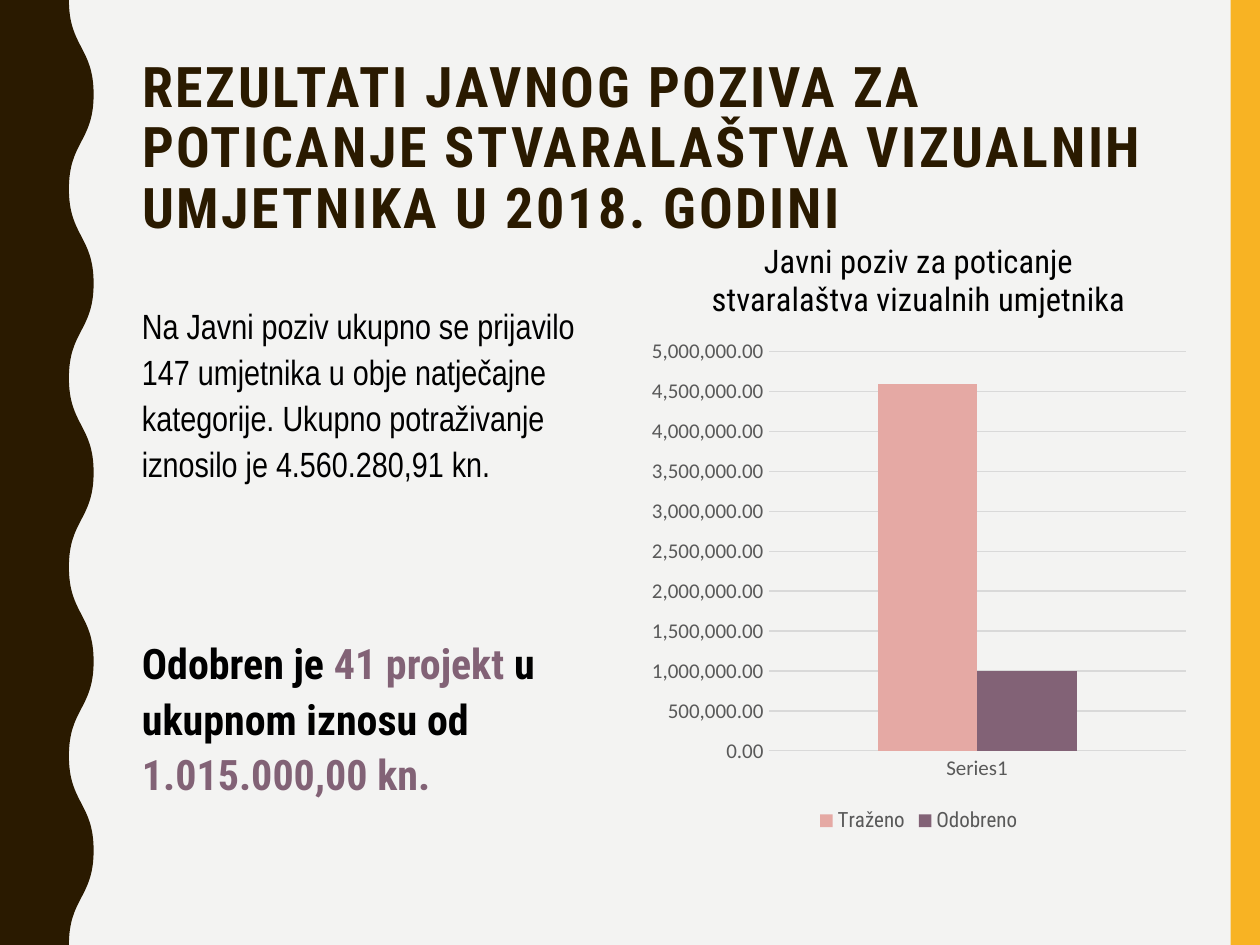
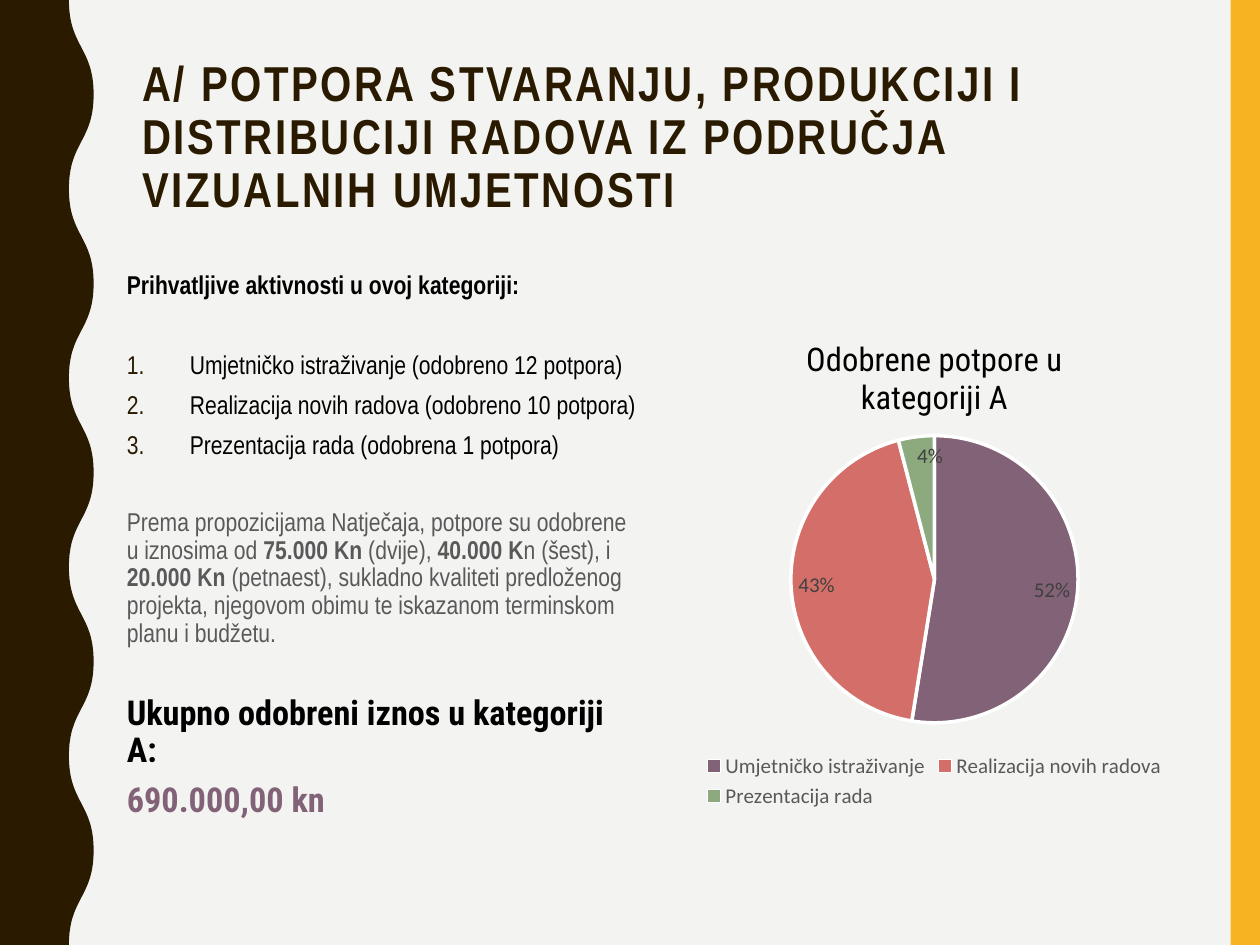
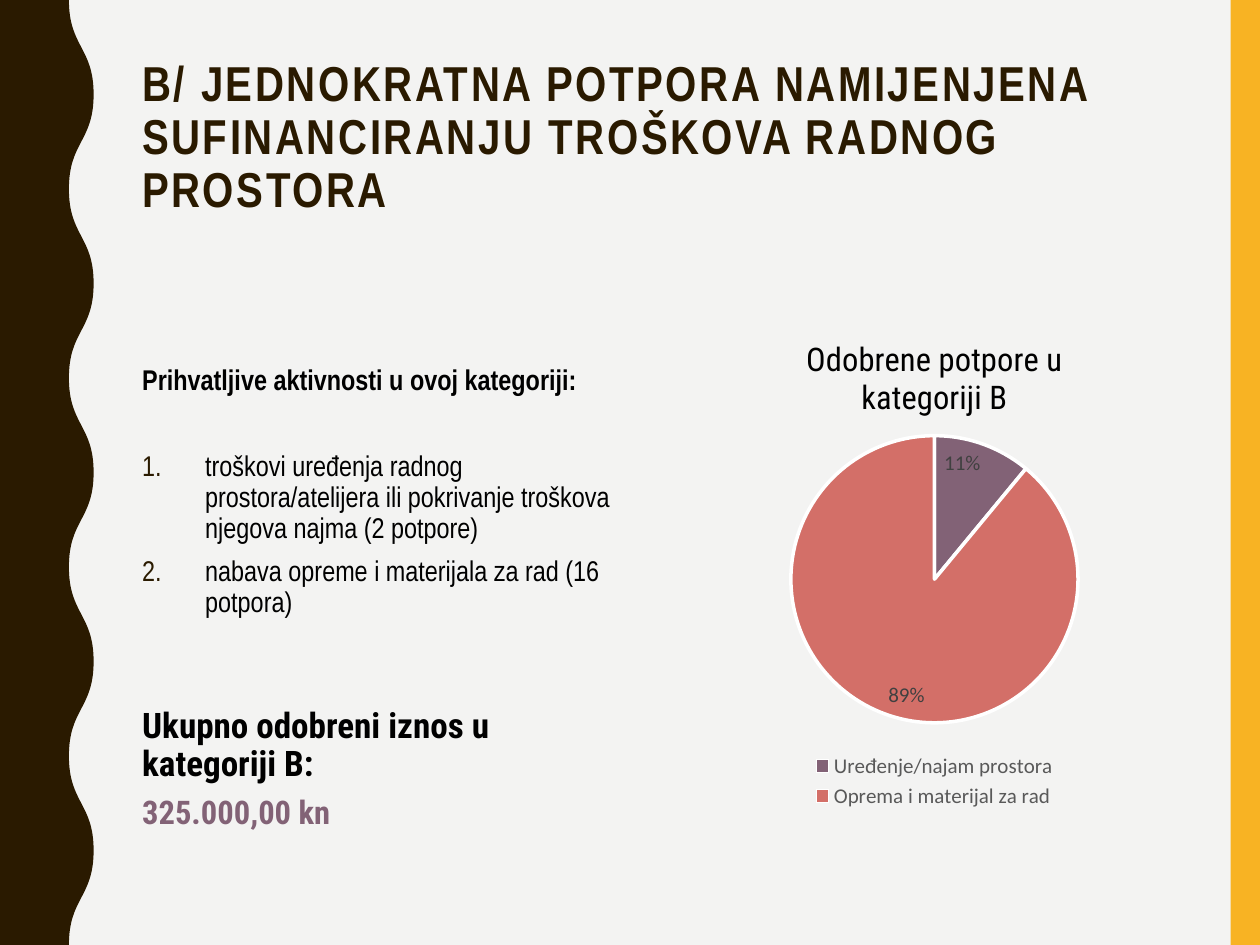
import lxml.etree
import pptx
import pptx.chart.data
import pptx.dml.color
import pptx.enum.chart
import pptx.enum.shapes
import pptx.enum.text
import pptx.oxml.ns
import pptx.util

Pt = pptx.util.Pt
RGBColor = pptx.dml.color.RGBColor
qn = pptx.oxml.ns.qn

# Shared colours and fonts
PAPER = RGBColor(0xF3, 0xF3, 0xF2)
YELLOW = RGBColor(0xF8, 0xB3, 0x23)
BROWN = RGBColor(0x2A, 0x1A, 0x00)
BLACK = RGBColor(0x00, 0x00, 0x00)
WHITE = RGBColor(0xFF, 0xFF, 0xFF)
GREY = RGBColor(0x59, 0x59, 0x59)
DARK_GREY = RGBColor(0x40, 0x40, 0x40)
GRID = RGBColor(0xD9, 0xD9, 0xD9)
PLUM = RGBColor(0x82, 0x62, 0x76)
PINK = RGBColor(0xE5, 0xA9, 0xA4)
CORAL = RGBColor(0xD3, 0x6F, 0x68)
GREEN = RGBColor(0x8C, 0xAA, 0x7E)
NARROW, ROBOTO, CALIBRI = "Arial Narrow", "Roboto Condensed", "Calibri"

WIDTH, HEIGHT = 720, 540
WAVE_IN, WAVE_OUT, WAVE_STEP = 39.4, 53.5, 54
PIE_BOX = (392.5, 180, 283, 285)


def set_font(font, name, size, color, bold=False):
    font.name, font.size, font.bold = name, Pt(size), bold
    font.color.rgb = color


def add_run(p, text, font=NARROW, size=20, color=BLACK, bold=False, spacing=0):
    r = p.add_run()
    r.text = text
    set_font(r.font, font, size, color, bold)
    if spacing:
        r._r.get_or_add_rPr().set("spc", str(int(spacing * 100)))


def paint(sp, color):
    sp.shadow.inherit = False
    sp.fill.solid()
    sp.fill.fore_color.rgb = color
    sp.line.fill.background()


def curve(line, start, end):
    """Turn a line segment into a curve that leaves and ends vertically."""
    middle = (start[1] + end[1]) // 2
    bezier = lxml.etree.Element(qn("a:cubicBezTo"))
    for x, y in ((start[0], middle), (end[0], middle), end):
        lxml.etree.SubElement(bezier, qn("a:pt"), x=str(x), y=str(y))
    line.getparent().replace(line, bezier)


def add_bands(slide):
    """Yellow bar on the right, wavy brown band on the left."""
    bar = slide.shapes.add_shape(pptx.enum.shapes.MSO_SHAPE.RECTANGLE,
                                 Pt(703.2), 0, Pt(16.8), Pt(HEIGHT))
    paint(bar, YELLOW)

    crests = [(Pt(WAVE_OUT if i % 2 else WAVE_IN), Pt(i * WAVE_STEP))
              for i in range(HEIGHT // WAVE_STEP + 1)]
    outline = slide.shapes.build_freeform(*crests[0])
    outline.add_line_segments(crests[1:] + [(0, Pt(HEIGHT)), (0, 0)])
    wave = outline.convert_to_shape()
    lines = list(wave._element.iter(qn("a:lnTo")))
    for line, start, end in zip(lines, crests, crests[1:]):
        curve(line, start, end)
    paint(wave, BROWN)
    return bar, wave


def share_bands(slide):
    """Move the bands to the layout, so that every slide shows them."""
    tree = slide.slide_layout.shapes._spTree
    for i, sp in enumerate(add_bands(slide)):
        tree.insert(2 + i, sp._element)


def add_slide(prs, title, font=NARROW, size=28):
    slide = prs.slides.add_slide(prs.slide_layouts[5])
    sp = slide.shapes.title
    sp.left, sp.top, sp.width, sp.height = Pt(74), Pt(30), Pt(601), Pt(117.5)
    tf = sp.text_frame
    tf.word_wrap = True
    tf.auto_size = pptx.enum.text.MSO_AUTO_SIZE.NONE
    tf.vertical_anchor = pptx.enum.text.MSO_ANCHOR.TOP
    p = tf.paragraphs[0]
    p.alignment = pptx.enum.text.PP_ALIGN.LEFT
    p.line_spacing = 0.9
    add_run(p, title, font=font, size=size, color=BROWN, bold=True, spacing=1.5)
    return slide


def number(p):
    """Turn a paragraph into an item of a numbered list."""
    pPr = p._p.get_or_add_pPr()
    pPr.set("marL", str(Pt(36)))
    pPr.set("indent", str(-Pt(36)))
    clr = lxml.etree.SubElement(pPr, qn("a:buClr"))
    lxml.etree.SubElement(clr, qn("a:srgbClr"), val=str(BROWN))
    lxml.etree.SubElement(pPr, qn("a:buAutoNum"), type="arabicPeriod")


def add_body(slide, box, paragraphs, line_spacing=0.9):
    """Each paragraph is (space before, numbered, [(text, format), ...])."""
    tf = slide.shapes.add_textbox(*map(Pt, box)).text_frame
    tf.word_wrap = True
    for i, (before, numbered, runs) in enumerate(paragraphs):
        p = tf.add_paragraph() if i else tf.paragraphs[0]
        p.line_spacing = line_spacing
        p.space_before = Pt(before)
        if numbered:
            number(p)
        for text, fmt in runs:
            add_run(p, text, **fmt)


def place_plot(chart, **fractions):
    """Fix the inner plot area, in fractions of the chart."""
    area = chart._chartSpace.chart.plotArea
    for old in area.findall(qn("c:layout")):
        area.remove(old)
    layout = lxml.etree.Element(qn("c:layout"))
    manual = lxml.etree.SubElement(layout, qn("c:manualLayout"))
    lxml.etree.SubElement(manual, qn("c:layoutTarget"), val="inner")
    for key in ("x", "y"):
        lxml.etree.SubElement(manual, qn(f"c:{key}Mode"), val="edge")
    for key, value in fractions.items():
        lxml.etree.SubElement(manual, qn(f"c:{key}"), val=str(value))
    area.insert(0, layout)


def add_chart(slide, kind, box, title, cats, series, legend_font=CALIBRI):
    data = pptx.chart.data.CategoryChartData()
    data.categories = cats
    for name, values in series:
        data.add_series(name, values)
    chart = slide.shapes.add_chart(kind, *map(Pt, box), data).chart
    set_font(chart.font, CALIBRI, 10, BLACK)

    chart.has_title = True
    p = chart.chart_title.text_frame.paragraphs[0]
    add_run(p, title, font=ROBOTO, size=18.6)
    chart.chart_title.include_in_layout = False

    chart.has_legend = True
    chart.legend.position = pptx.enum.chart.XL_LEGEND_POSITION.BOTTOM
    chart.legend.include_in_layout = False
    set_font(chart.legend.font, legend_font, 12, GREY)
    return chart


def add_column_chart(slide, box, title, cats, series, colors):
    chart = add_chart(slide, pptx.enum.chart.XL_CHART_TYPE.COLUMN_CLUSTERED,
                      box, title, cats, series, legend_font=ROBOTO)
    place_plot(chart, x=0.23, y=0.22, w=0.75, h=0.64)
    plot = chart.plots[0]
    plot.gap_width, plot.overlap, plot.vary_by_categories = 219, 0, False
    for s, color in zip(plot.series, colors):
        s.format.fill.solid()
        s.format.fill.fore_color.rgb = color

    cat, val = chart.category_axis, chart.value_axis
    for axis in (cat, val):
        axis.major_tick_mark = pptx.enum.chart.XL_TICK_MARK.NONE
        set_font(axis.tick_labels.font, CALIBRI, 12, GREY)
    val.tick_labels.number_format = "#,##0.00"
    val.tick_labels.number_format_is_linked = False
    val.format.line.fill.background()
    val.has_major_gridlines = True
    for line in (cat.format.line, val.major_gridlines.format.line):
        line.color.rgb = GRID
        line.width = Pt(0.75)


def add_pie_chart(slide, title, shares):
    """shares maps each category to (percentage, colour)."""
    values = [value for value, color in shares.values()]
    chart = add_chart(slide, pptx.enum.chart.XL_CHART_TYPE.PIE, PIE_BOX, title,
                      list(shares), [("Series 1", values)])
    place_plot(chart, x=0.21, y=0.24, w=0.58, h=0.58)
    plot = chart.plots[0]
    plot.vary_by_categories = True
    for i, (value, color) in enumerate(shares.values()):
        fmt = plot.series[0].points[i].format
        fmt.fill.solid()
        fmt.fill.fore_color.rgb = color
        fmt.line.color.rgb = WHITE
        fmt.line.width = Pt(2)
    # The values are rounded percentages already, so they are shown as they are
    plot.has_data_labels = True
    labels = plot.data_labels
    labels.show_value = True
    labels.number_format = '0"%"'
    labels.number_format_is_linked = False
    labels.position = pptx.enum.chart.XL_LABEL_POSITION.INSIDE_END
    set_font(labels.font, CALIBRI, 12, DARK_GREY)


def build_results(prs):
    slide = add_slide(
        prs, "REZULTATI JAVNOG POZIVA ZA POTICANJE STVARALAŠTVA VIZUALNIH "
        "UMJETNIKA U 2018. GODINI", font=ROBOTO, size=32)
    share_bands(slide)
    strong = dict(font=ROBOTO, size=24, bold=True)
    plum = dict(strong, color=PLUM)
    add_body(slide, (74, 168, 286, 317), [
        (0, False, [("Na Javni poziv ukupno se prijavilo 147 umjetnika u obje "
                     "natječajne kategorije. Ukupno potraživanje iznosilo je "
                     "4.560.280,91 kn.", {})]),
        (84.5, False, [("Odobren je ", strong), ("41 projekt ", plum),
                       ("u ukupnom iznosu od ", strong),
                       ("1.015.000,00 kn.", plum)]),
    ], line_spacing=1.1)
    add_column_chart(
        slide, (366, 122.5, 318, 356.5),
        "Javni poziv za poticanje stvaralaštva vizualnih umjetnika",
        ["Series1"], [("Traženo", [4600000]), ("Odobreno", [1000000])],
        [PINK, PLUM])


def build_category_a(prs):
    slide = add_slide(
        prs, "A/ POTPORA STVARANJU, PRODUKCIJI I DISTRIBUCIJI RADOVA IZ "
        "PODRUČJA VIZUALNIH UMJETNOSTI")
    plain = dict(size=14.7)
    grey = dict(plain, color=GREY)
    grey_bold = dict(grey, bold=True)
    total = dict(font=ROBOTO, size=19.6, bold=True)
    add_body(slide, (65.4, 152.2, 306, 324), [
        (0, False, [("Prihvatljive aktivnosti u ovoj kategoriji:",
                     dict(plain, bold=True))]),
        (29.5, True, [("Umjetničko istraživanje (odobreno 12 potpora)", plain)]),
        (7, True, [("Realizacija novih radova (odobreno 10 potpora)", plain)]),
        (7, True, [("Prezentacija rada (odobrena 1 potpora)", plain)]),
        (28, False, [
            ("Prema propozicijama Natječaja, potpore su odobrene u iznosima "
             "od ", grey),
            ("75.000 Kn", grey_bold), (" (dvije), ", grey),
            ("40.000 K", grey_bold), ("n (šest), i ", grey),
            ("20.000 Kn ", grey_bold),
            ("(petnaest), sukladno kvaliteti predloženog projekta, njegovom "
             "obimu te iskazanom terminskom planu i budžetu.", grey)]),
        (27.5, False, [("Ukupno odobreni iznos u kategoriji A:", total)]),
        (7, False, [("690.000,00 kn", dict(total, color=PLUM))]),
    ])
    add_pie_chart(slide, "Odobrene potpore u kategoriji A", {
        "Umjetničko istraživanje": (52, PLUM),
        "Realizacija novih radova": (43, CORAL),
        "Prezentacija rada": (4, GREEN),
    })


def build_category_b(prs):
    slide = add_slide(
        prs, "B/ JEDNOKRATNA POTPORA NAMIJENJENA SUFINANCIRANJU TROŠKOVA "
        "RADNOG PROSTORA")
    plain = dict(size=16.3)
    total = dict(font=ROBOTO, size=20.1, bold=True)
    add_body(slide, (74.2, 205.8, 283, 261), [
        (0, False, [("Prihvatljive aktivnosti u ovoj kategoriji:",
                     dict(plain, bold=True))]),
        (31.5, True, [("troškovi uređenja radnog prostora/atelijera ili "
                       "pokrivanje troškova njegova najma (2 potpore)", plain)]),
        (7, True, [("nabava opreme i materijala za rad (16 potpora)", plain)]),
        (51, False, [("Ukupno odobreni iznos u kategoriji B:", total)]),
        (7, False, [("325.000,00 kn", dict(total, size=18.6, color=PLUM))]),
    ])
    add_pie_chart(slide, "Odobrene potpore u kategoriji B", {
        "Uređenje/najam prostora": (11, PLUM),
        "Oprema i materijal za rad": (89, CORAL),
    })


def main():
    prs = pptx.Presentation()
    prs.slide_width, prs.slide_height = Pt(WIDTH), Pt(HEIGHT)
    background = prs.slide_master.background.fill
    background.solid()
    background.fore_color.rgb = PAPER
    build_results(prs)
    build_category_a(prs)
    build_category_b(prs)
    prs.save("out.pptx")


if __name__ == "__main__":
    main()
